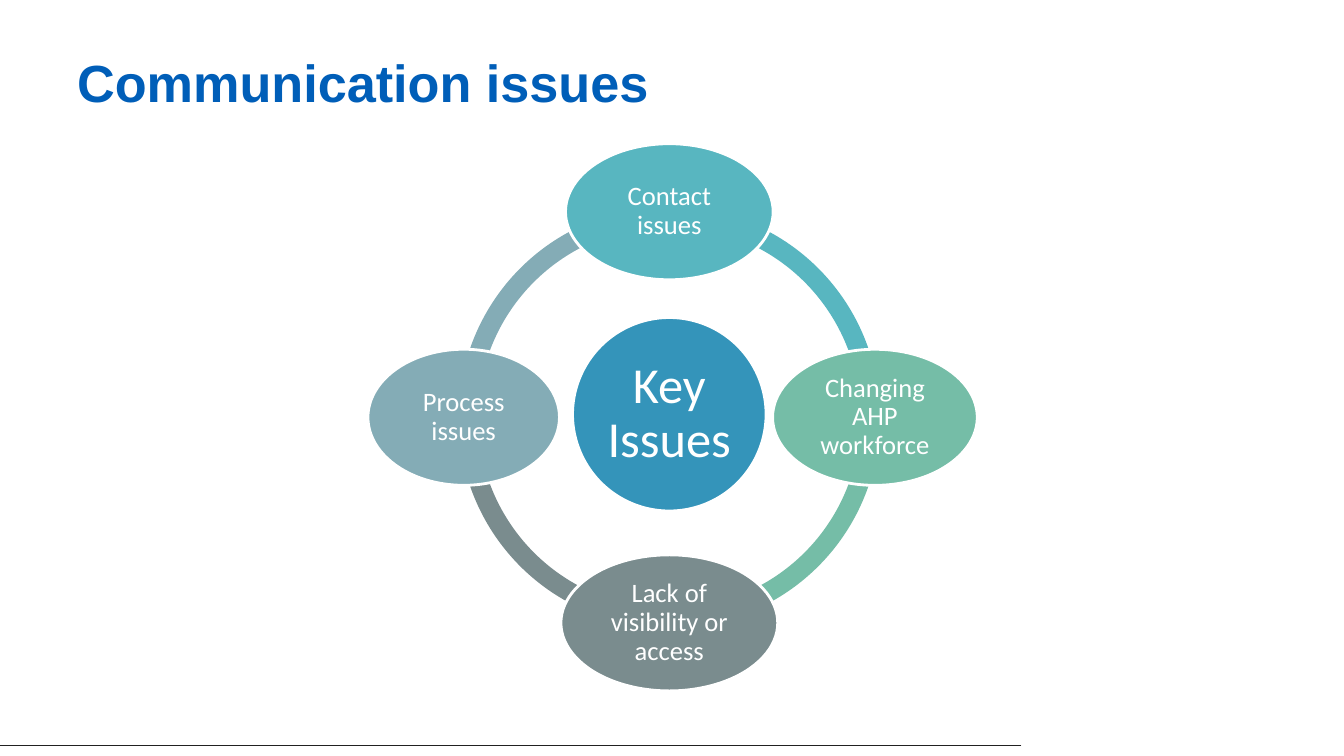
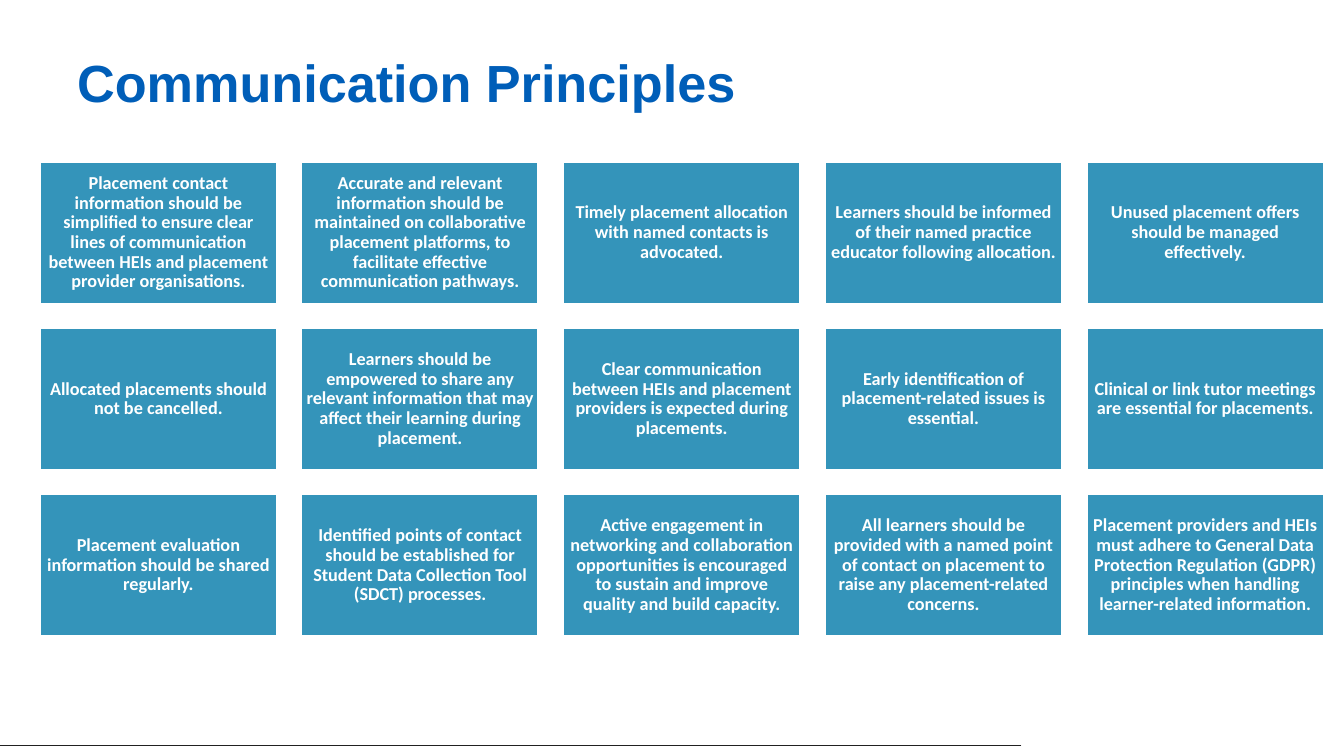
from math import cos, radians, sin

from pptx import Presentation
from pptx.dml.color import RGBColor
from pptx.enum.shapes import MSO_CONNECTOR, MSO_SHAPE as SHAPE
from pptx.enum.text import MSO_ANCHOR as ANCHOR, PP_ALIGN as ALIGN
from pptx.oxml.ns import qn
from pptx.util import Inches, Pt

WHITE, INK, TITLE_BLUE = "FFFFFF", "212121", "005EB8"
BLUE, TEAL, GREEN, SLATE, MIST = "3494BA", "58B6C0", "75BDA7", "7A8C8E", "84ACB6"

TITLE = {"name": "Arial", "size": Pt(37.3), "bold": True}
HUB = {"name": "Calibri", "size": Pt(36)}
NODE = {"name": "Calibri", "size": Pt(19)}
TILE = {"name": "Calibri", "size": Pt(13), "bold": True}

# Label, colour and width of each oval, clockwise from the top
ISSUES = [
    ("Contact issues", TEAL, 15.45),
    ("Changing AHP workforce", GREEN, 15.23),
    ("Lack of visibility or access", SLATE, 16.13),
    ("Process issues", MIST, 14.25),
]

PRINCIPLES = [
    "Placement contact information should be simplified to ensure clear lines of "
    "communication between HEIs and placement provider organisations.",
    "Accurate and relevant information should be maintained on collaborative "
    "placement platforms, to facilitate effective communication pathways.",
    "Timely placement allocation with named contacts is advocated.",
    "Learners should be informed of their named practice educator following allocation.",
    "Unused placement offers should be managed effectively.",
    "Allocated placements should not be cancelled.",
    "Learners should be empowered to share any relevant information that may affect "
    "their learning during placement.",
    "Clear communication between HEIs and placement providers is expected during placements.",
    "Early identification of placement-related issues is essential.",
    "Clinical or link tutor meetings are essential for placements.",
    "Placement evaluation information should be shared regularly.",
    "Identified points of contact should be established for Student Data Collection "
    "Tool (SDCT) processes.",
    "Active engagement in networking and collaboration opportunities is encouraged to "
    "sustain and improve quality and build capacity.",
    "All learners should be provided with a named point of contact on placement to "
    "raise any placement-related concerns.",
    "Placement providers and HEIs must adhere to General Data Protection Regulation "
    "(GDPR) principles when handling learner-related information.",
]


def colour(value):
    return RGBColor.from_string(value)


class Deck:
    """Holds the style and current slide; lengths are percent of slide width or height."""

    def __init__(self):
        self.presentation = Presentation()
        self.presentation.slide_width = Inches(13.33)
        self.presentation.slide_height = Inches(7.5)
        self.aspect = self.presentation.slide_width / self.presentation.slide_height
        self.slide = None

    def across(self, share):
        return round(self.presentation.slide_width * share / 100)

    def down(self, share):
        return round(self.presentation.slide_height * share / 100)

    def box(self, left, top, width, height):
        return self.across(left), self.down(top), self.across(width), self.down(height)

    def new_slide(self, title):
        self.slide = self.presentation.slides.add_slide(self.presentation.slide_layouts[6])
        self.footer_line()
        heading = self.slide.shapes.add_textbox(*self.box(5, 2.4, 90, 16.67))
        self.set_text(heading, title, TITLE, TITLE_BLUE, ALIGN.LEFT)

    def footer_line(self):
        height = self.down(98.67)
        line = self.slide.shapes.add_connector(
            MSO_CONNECTOR.STRAIGHT, self.across(76), height, 0, height)
        line.line.color.rgb = colour(INK)
        line.line.width = Pt(0.75)
        properties = line._element.spPr
        properties.append(properties.makeelement(qn("a:effectLst"), {}))

    def set_text(self, shape, text, style, ink=WHITE, align=ALIGN.CENTER,
                 inset=None, spacing=None):
        frame = shape.text_frame
        frame.word_wrap = True
        frame.vertical_anchor = ANCHOR.MIDDLE
        if inset is not None:
            for side in ("left", "top", "right", "bottom"):
                setattr(frame, f"margin_{side}", Inches(inset))
        paragraph = frame.paragraphs[0]
        paragraph.text = text
        paragraph.alignment = align
        paragraph.line_spacing = spacing
        for name, value in style.items():
            setattr(paragraph.font, name, value)
        paragraph.font.color.rgb = colour(ink)

    def filled(self, kind, box, fill):
        shape = self.slide.shapes.add_shape(kind, *self.box(*box))
        shape.shadow.inherit = False
        shape.fill.solid()
        shape.fill.fore_color.rgb = colour(fill)
        shape.line.fill.background()
        return shape

    def labelled(self, kind, box, fill, text, style, inset=0.05):
        shape = self.filled(kind, box, fill)
        shape.line.color.rgb = colour(WHITE)
        shape.line.width = Pt(2)
        self.set_text(shape, text, style, inset=inset, spacing=0.9)

    def oval(self, x, y, width, height, fill, text, style, inset):
        """Draws a labelled ellipse centred on x, y."""
        box = x - width / 2, y - height / 2, width, height
        self.labelled(SHAPE.OVAL, box, fill, text, style, inset)

    def arc(self, x, y, width, start, sweep, fill):
        """Draws part of a ring centred on x, y; angles are clockwise degrees."""
        height = width * self.aspect
        shape = self.filled(
            SHAPE.BLOCK_ARC, (x - width / 2, y - height / 2, width, height), fill)
        # Preset angles are stored in units of 100000/60000 degrees
        shape.adjustments[0] = start % 360 * 0.6
        shape.adjustments[1] = (start + sweep) % 360 * 0.6
        shape.adjustments[2] = 0.046


def issues_slide(deck):
    deck.new_slide("Communication issues")
    x, y, orbit, hub_width = 49.8, 55.2, 15.3, 14.4
    step = 360 / len(ISSUES)
    angles = [270 + index * step for index in range(len(ISSUES))]
    for angle, (_, fill, _) in zip(angles, ISSUES):
        deck.arc(x, y, 31.36, angle, step, fill)
    deck.oval(x, 54.8, hub_width, hub_width * deck.aspect, BLUE, "Key Issues", HUB, 0.05)
    for angle, (label, fill, width) in zip(angles, ISSUES):
        node_x = x + orbit * cos(radians(angle))
        node_y = y + orbit * deck.aspect * sin(radians(angle))
        deck.oval(node_x, node_y, width, 18, fill, label, NODE, 0.03)


def principles_slide(deck):
    deck.new_slide("Communication Principles")
    columns = 5
    for index, principle in enumerate(PRINCIPLES):
        row, column = divmod(index, columns)
        box = 2.93 + column * 19.47, 21.33 + row * 22, 17.7, 18.93
        deck.labelled(SHAPE.RECTANGLE, box, BLUE, principle, TILE)


def main():
    deck = Deck()
    issues_slide(deck)
    principles_slide(deck)
    deck.presentation.save("out.pptx")


if __name__ == "__main__":
    main()
